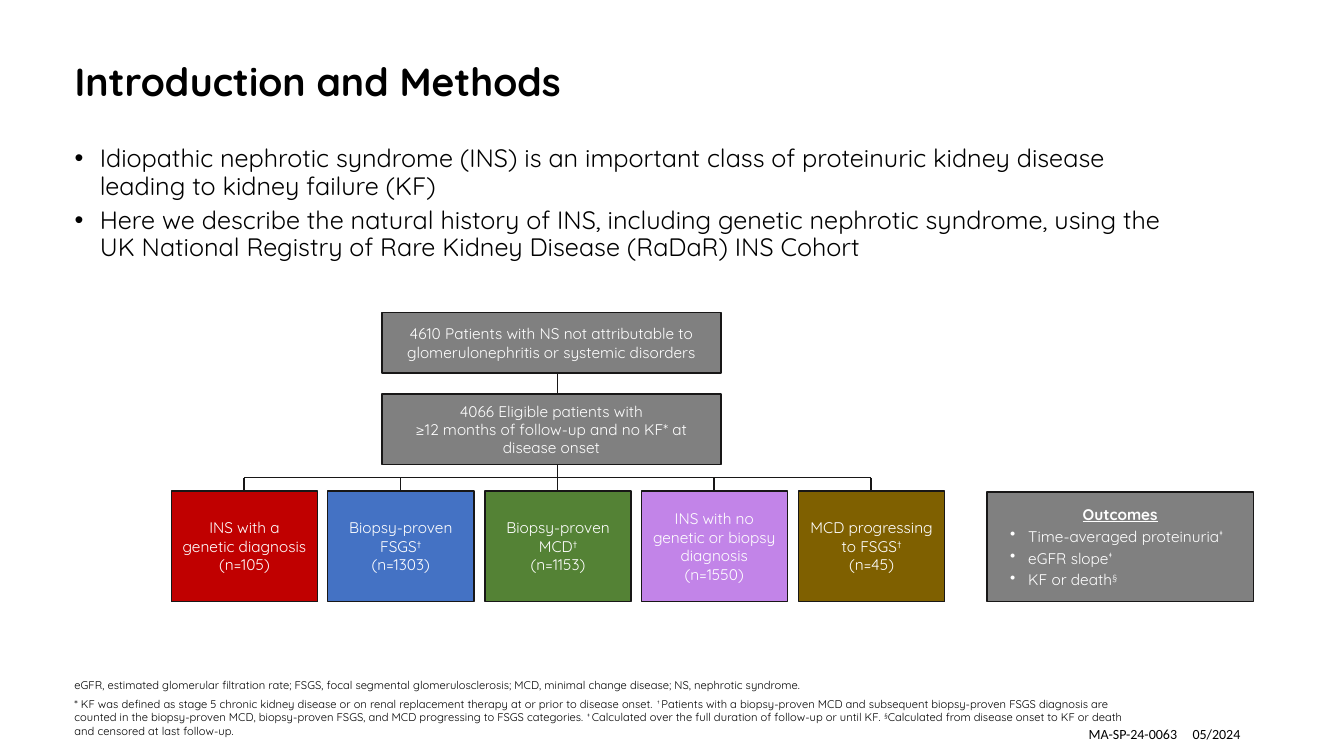
from dataclasses import dataclass

from lxml import etree
from pptx import Presentation
from pptx import util as u
from pptx.dml.color import RGBColor
from pptx.enum import shapes, text
from pptx.oxml.ns import qn

PX = 9144  # 100 px to the inch


@dataclass(frozen=True)
class Theme:
    font: str = "Quicksand"
    dagger_font: str = "Karla"
    code_font: str = "Calibri"
    black: str = "000000"
    white: str = "FFFFFF"
    outline: str = "181717"
    gray: str = "808080"
    red: str = "C00000"
    blue: str = "4472C4"
    green: str = "548235"
    purple: str = "C284E8"
    brown: str = "7F6000"
    title_size: int = 28
    body_size: int = 18
    box_size: int = 11
    code_size: int = 10
    note_size: int = 8


theme = Theme()


def write(frame, *lines, size, color=theme.black, font=theme.font, raised_font=theme.font,
          bold=False, underline=False, align=text.PP_ALIGN.LEFT, spacing=1.0,
          before=0, after=0, hanging=None, tab=None):
    """Append paragraphs to a frame; words between ^ marks are superscript."""
    frame.word_wrap = True
    for line in lines:
        is_first = not frame.paragraphs[0].runs
        paragraph = frame.paragraphs[0] if is_first else frame.add_paragraph()
        properties = paragraph._p.get_or_add_pPr()
        if hanging:
            margin, indent = hanging
            properties.set("marL", str(margin * PX))
            properties.set("indent", str(-indent * PX))
            etree.SubElement(properties, qn("a:buChar")).set("char", "•")
        if tab:
            stops = etree.SubElement(properties, qn("a:tabLst"))
            etree.SubElement(stops, qn("a:tab"), pos=str(tab * PX), algn="l")
        paragraph.alignment = align
        paragraph.line_spacing = spacing
        paragraph.space_before = u.Pt(0 if is_first else before)
        paragraph.space_after = u.Pt(after)
        for index, words in enumerate(line.split("^")):
            if not words:
                continue
            raised = index % 2 == 1
            run = paragraph.add_run()
            run.text = words
            run.font.name = raised_font if raised else font
            run.font.size = u.Pt(size)
            run.font.bold = bold
            run.font.underline = underline
            run.font.color.rgb = RGBColor.from_string(color)
            if raised:
                run._r.get_or_add_rPr().set("baseline", "30000")


def add_box(slide, kind, left, top, width, height, fill):
    shape = slide.shapes.add_shape(kind, left * PX, top * PX, width * PX, height * PX)
    shape.shadow.inherit = False
    shape.fill.solid()
    shape.fill.fore_color.rgb = RGBColor.from_string(fill)
    shape.line.color.rgb = RGBColor.from_string(theme.outline)
    shape.line.width = u.Pt(1)
    shape.text_frame.vertical_anchor = text.MSO_ANCHOR.MIDDLE
    return shape.text_frame


presentation = Presentation()
presentation.slide_width = 1333 * PX
presentation.slide_height = 750 * PX
slide = presentation.slides.add_slide(presentation.slide_layouts[1])

# Title and introduction
title, body = slide.placeholders
for placeholder, (left, top, width, height) in (
    (title, (64, 11, 1048, 145)),
    (body, (64, 140, 1108, 131)),
):
    placeholder.left, placeholder.top = left * PX, top * PX
    placeholder.width, placeholder.height = width * PX, height * PX
    placeholder.text_frame.auto_size = text.MSO_AUTO_SIZE.NONE
title.text_frame.vertical_anchor = text.MSO_ANCHOR.MIDDLE
write(title.text_frame, "Introduction and Methods", size=theme.title_size, bold=True, spacing=0.9)
write(
    body.text_frame,
    "Idiopathic nephrotic syndrome (INS) is an important class of proteinuric kidney disease "
    "leading to kidney failure (KF)",
    "Here we describe the natural history of INS, including genetic nephrotic syndrome, using "
    "the UK National Registry of Rare Kidney Disease (RaDaR) INS Cohort",
    size=theme.body_size, spacing=0.9, before=5, hanging=(25, 25),
)

# Patient flow: connecting lines, then the boxes over them
groups = [
    (theme.red, "INS with a genetic diagnosis", 105),
    (theme.blue, "Biopsy-proven FSGS^†^", 1303),
    (theme.green, "Biopsy-proven MCD^†^", 1153),
    (theme.purple, "INS with no genetic or biopsy diagnosis", 1550),
    (theme.brown, "MCD progressing to FSGS^†^", 45),
]
group_top, group_width, group_height = 487, 145, 110
group_lefts = [170 + index * 311 // 2 for index in range(len(groups))]
centers = [left + group_width // 2 for left in group_lefts]
trunk, branch_y = centers[2], 474

flow_lines = [(trunk, 369, trunk, 391), (trunk, 461, trunk, branch_y)]
flow_lines.append((centers[0], branch_y, centers[-1], branch_y))
flow_lines += [(center, branch_y, center, group_top) for center in centers]
for ends in flow_lines:
    line = slide.shapes.add_connector(
        shapes.MSO_CONNECTOR.STRAIGHT, *(end * PX for end in ends))
    line.line.color.rgb = RGBColor.from_string(theme.outline)
    line.line.width = u.Pt(1)
    etree.SubElement(line._element.spPr, qn("a:effectLst"))

process = shapes.MSO_SHAPE.FLOWCHART_PROCESS
flow_boxes = [
    (379, 310, 336, 60, theme.gray,
     ["4610 Patients with NS not attributable to glomerulonephritis or systemic disorders"]),
    (379, 391, 336, 70, theme.gray,
     ["4066 Eligible patients with", "≥12 months of follow-up and no KF* at disease onset"]),
]
for left, (fill, name, count) in zip(group_lefts, groups):
    flow_boxes.append(
        (left, group_top, group_width, group_height, fill, [name, f"(n={count})"]))
for *area, fill, lines in flow_boxes:
    write(add_box(slide, process, *area, fill), *lines, size=theme.box_size,
          color=theme.white, raised_font=theme.dagger_font, align=text.PP_ALIGN.CENTER)

# Outcomes
outcomes = add_box(slide, shapes.MSO_SHAPE.RECTANGLE, 979, 488, 264, 109, theme.gray)
write(outcomes, "Outcomes", size=theme.box_size, color=theme.white, bold=True,
      underline=True, align=text.PP_ALIGN.CENTER, after=1)
write(outcomes, "Time-averaged proteinuria^‡^", "eGFR slope^‡^", "KF or death^§^",
      size=theme.box_size, color=theme.white, before=1.5, after=1, hanging=(31, 18))

# Footnotes and document code
notes = slide.shapes.add_textbox(64 * PX, 668 * PX, 1079 * PX, 70 * PX)
write(
    notes.text_frame,
    "eGFR, estimated glomerular filtration rate; FSGS, focal segmental glomerulosclerosis; "
    "MCD, minimal change disease; NS, nephrotic syndrome.",
    "* KF was defined as stage 5 chronic kidney disease or on renal replacement therapy at or "
    "prior to disease onset. ^† ^Patients with a biopsy-proven MCD and subsequent "
    "biopsy-proven FSGS diagnosis are counted in the biopsy-proven MCD, biopsy-proven FSGS, "
    "and MCD progressing to FSGS categories. ^‡ ^Calculated over the full duration of "
    "follow-up or until KF. ^§^Calculated from disease onset to KF or death and censored at "
    "last follow-up.",
    size=theme.note_size, before=2, after=2,
)
code = slide.shapes.add_textbox(1070 * PX, 715 * PX, 174 * PX, 27 * PX)
write(code.text_frame, "MA-SP-24-0063\t05/2024", size=theme.code_size,
      font=theme.code_font, tab=103)

presentation.save("out.pptx")
